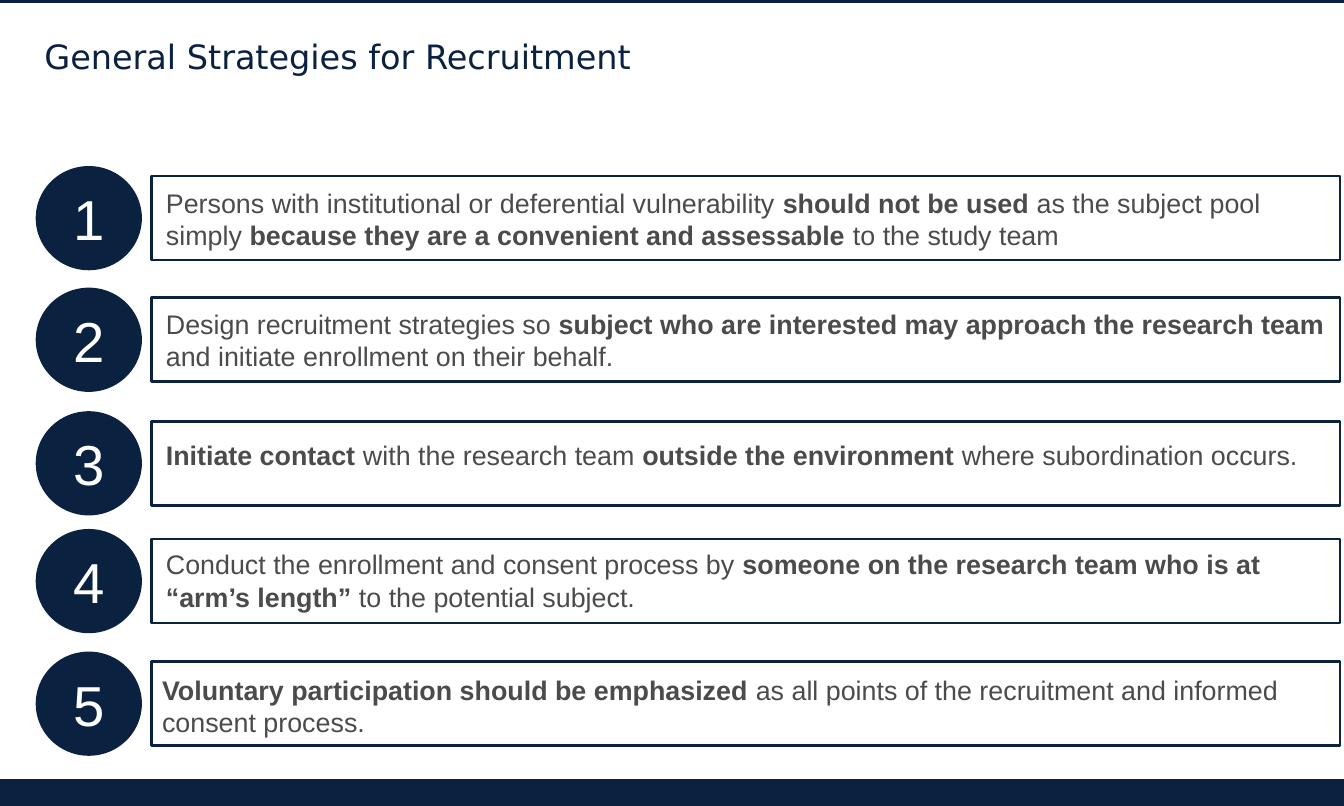
from pptx import Presentation
from pptx.dml.color import RGBColor as RGB
from pptx.enum.shapes import MSO_SHAPE as Kind
from pptx.enum.text import MSO_ANCHOR as Anchor, MSO_AUTO_SIZE as Fit, PP_ALIGN as Align
from pptx.util import Inches, Pt

TITLE = "General Strategies for Recruitment"
ROWS = [
    (1.72, 1.62, 0.16, 0.77, [
        ("Persons with institutional or deferential vulnerability ", False),
        ("should not be used ", True),
        ("as the subject pool simply ", False),
        ("because they are a convenient and assessable ", True),
        ("to the study team", False)]),
    (2.98, 1.62, 0.16, 0.77, [
        ("Design recruitment strategies so ", False),
        ("subject who are interested may approach the research team ", True),
        ("and initiate enrollment on their behalf.", False)]),
    (4.26, 1.62, 0.24, 0.44, [
        ("Initiate contact ", True),
        ("with the research team ", False),
        ("outside the environment ", True),
        ("where subordination occurs.", False)]),
    (5.48, 1.62, 0.15, 0.77, [
        ("Conduct the enrollment and consent process by ", False),
        ("someone on the research team who is at “arm’s length”", True),
        (" to the potential subject.", False)]),
    (6.75, 1.58, 0.18, 0.77, [
        ("Voluntary participation should be emphasized ", True),
        ("as all points of the recruitment and informed consent process.", False)]),
]
HUES = {"navy": "0A2240", "white": "FFFFFF", "gray": "4C4A4B"}
WIDE, HIGH = 13.92, 8.35
DISC_W, DISC_H = 1.1, 1.08
BOX_H = 0.87
TEXT_W = 12.3


def hue(name):
    return RGB.from_string(HUES[name])


def draw(shapes, kind, area, fill=None, line=None, width=0):
    shape = shapes.add_shape(kind, *map(Inches, area))
    shape.shadow.inherit = False
    if fill:
        shape.fill.solid()
        shape.fill.fore_color.rgb = hue(fill)
    else:
        shape.fill.background()
    if line:
        shape.line.color.rgb = hue(line)
        shape.line.width = Pt(width)
    else:
        shape.line.fill.background()
    return shape


def write(para, text, size, color, face="Arial", bold=False):
    run = para.add_run()
    run.text = text
    font = run.font
    font.name, font.size, font.bold = face, Pt(size), bold
    font.color.rgb = hue(color)


def add_row(slide, num, top, left, drop, high, runs):
    shapes = slide.shapes.add_group_shape().shapes
    box = shapes.add_textbox(*map(Inches, (left, top + drop, TEXT_W, high)))
    frame = box.text_frame
    frame.word_wrap = True
    frame.auto_size = Fit.SHAPE_TO_FIT_TEXT
    for text, bold in runs:
        write(frame.paragraphs[0], text, 20, "gray", bold=bold)

    disc = draw(shapes, Kind.OVAL, (0.37, top, DISC_W, DISC_H), "navy")
    frame = disc.text_frame
    frame.vertical_anchor = Anchor.MIDDLE
    frame.paragraphs[0].alignment = Align.CENTER
    write(frame.paragraphs[0], str(num), 42, "white")

    edge = top + (DISC_H - BOX_H) / 2
    draw(shapes, Kind.RECTANGLE, (1.57, edge, 12.31, BOX_H), line="navy", width=2)


def add_title(slide):
    title = slide.shapes.title
    title.left, title.top, title.width, title.height = map(Inches, (0.46, 0.37, 9.48, 0.42))
    frame = title.text_frame
    frame.margin_left = frame.margin_right = frame.margin_top = frame.margin_bottom = 0
    frame.word_wrap = True
    frame.auto_size = Fit.SHAPE_TO_FIT_TEXT
    frame.vertical_anchor = Anchor.TOP
    frame.paragraphs[0].alignment = Align.LEFT
    write(frame.paragraphs[0], TITLE, 25, "navy", "DejaVu Sans")
    slide.shapes._spTree.append(title._element)


def main():
    deck = Presentation()
    deck.slide_width, deck.slide_height = Inches(WIDE), Inches(HIGH)
    slide = deck.slides.add_slide(deck.slide_layouts[5])
    for top, high, fill in ((0, 8.11, "white"), (8.1, 0.31, "navy")):
        draw(slide.shapes, Kind.RECTANGLE, (-0.03, top, 14, high), fill, "navy", 4.5)
    add_title(slide)
    for num, row in enumerate(ROWS, 1):
        add_row(slide, num, *row)
    deck.save("out.pptx")


if __name__ == "__main__":
    main()
